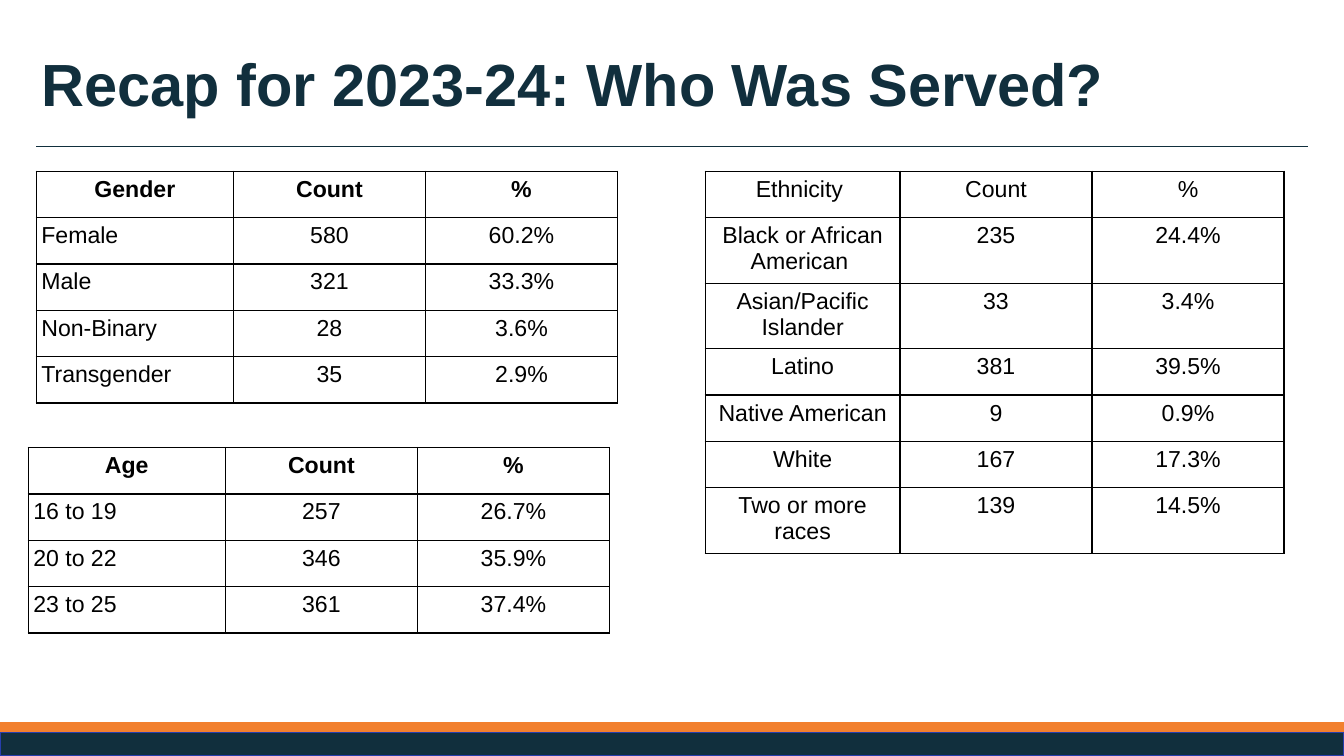
from lxml.etree import SubElement as Sub
from pptx import Presentation
from pptx.dml.color import RGBColor as RGB
from pptx.enum.shapes import MSO_CONNECTOR as Conn, MSO_SHAPE as Shape
from pptx.enum.text import MSO_ANCHOR as Anchor, PP_ALIGN as Align
from pptx.oxml.ns import qn
from pptx.util import Inches, Pt

COLORS = {"navy": "112F3D", "orange": "F2802E", "blue": "273EAC", "black": "000000"}


class Deck:
    """Holds the style and the slide; lengths are percent of slide width or height."""
    font = "Arial"
    pad = Inches(0.1)

    def __init__(self, wide, high):
        self.prs = Presentation()
        self.prs.slide_width, self.prs.slide_height = Inches(wide), Inches(high)
        self.slide = self.prs.slides.add_slide(self.prs.slide_layouts[6])
        self.shapes = self.slide.shapes

    def x(self, share):
        return round(self.prs.slide_width * share / 100)

    def y(self, share):
        return round(self.prs.slide_height * share / 100)

    def box(self, left, top, wide, high):
        return self.x(left), self.y(top), self.x(wide), self.y(high)

    def color(self, name):
        return RGB.from_string(COLORS[name])

    def run(self, para, text, size, color, bold=False):
        run = para.add_run()
        run.text = text
        run.font.name, run.font.size, run.font.bold = self.font, Pt(size), bold
        run.font.color.rgb = self.color(color)

    def band(self, top, high, fill, edge=None):
        bar = self.shapes.add_shape(Shape.RECTANGLE, *self.box(0, top, 100, high))
        bar.shadow.inherit = False
        bar.fill.solid()
        bar.fill.fore_color.rgb = self.color(fill)
        if edge:
            bar.line.color.rgb = self.color(edge)
            bar.line.width = Pt(2)
        else:
            bar.line.fill.background()

    def rule(self, left, right, top, color):
        line = self.shapes.add_connector(
            Conn.STRAIGHT, self.x(left), self.y(top), self.x(right), self.y(top))
        line.line.color.rgb = self.color(color)
        line.line.width = Pt(0.75)
        Sub(line._element.spPr, qn("a:effectLst"))

    def title(self, text, *area):
        frame = self.shapes.add_textbox(*self.box(*area)).text_frame
        frame.word_wrap = True
        frame.vertical_anchor = Anchor.MIDDLE
        para = frame.paragraphs[0]
        para.line_spacing = 0.9
        self.run(para, text, 85, "navy", True)

    def border(self, cell):
        props = cell._tc.get_or_add_tcPr()
        for side in ("lnL", "lnR", "lnT", "lnB"):
            line = Sub(props, qn(f"a:{side}"), w=str(Pt(2.25)))
            fill = Sub(line, qn("a:solidFill"))
            Sub(fill, qn("a:srgbClr"), val=COLORS["black"])

    def table(self, left, top, first, rows, bold=True, label=Align.LEFT):
        wides = [first, 14.29, 14.29]
        high = 6.13
        area = self.box(left, top, sum(wides), high * len(rows))
        table = self.shapes.add_table(len(rows), len(wides), *area).table
        table.first_row = bold
        table.horz_banding = False
        for col, wide in zip(table.columns, wides):
            col.width = self.x(wide)
        for r, row in enumerate(rows):
            table.rows[r].height = self.y(high)
            for c, text in enumerate(row):
                cell = table.cell(r, c)
                cell.margin_left = cell.margin_right = self.pad
                cell.margin_top = cell.margin_bottom = self.pad
                self.border(cell)
                cell.fill.background()
                para = cell.text_frame.paragraphs[0]
                para.alignment = label if r and not c else Align.CENTER
                self.run(para, text, 33, "black", bold and r == 0)


GENDER = [
    ("Gender", "Count", "%"),
    ("Female", "580", "60.2%"),
    ("Male", "321", "33.3%"),
    ("Non-Binary", "28", "3.6%"),
    ("Transgender", "35", "2.9%"),
]
ETHNIC = [
    ("Ethnicity ", "Count", "%"),
    ("Black or African American ", "235", "24.4%"),
    ("Asian/Pacific Islander", "33", "3.4%"),
    ("Latino", "381", "39.5%"),
    ("Native American", "9", "0.9%"),
    ("White", "167", "17.3%"),
    ("Two or more races", "139", "14.5%"),
]
AGE = [
    ("Age", "Count", "%"),
    ("16 to 19", "257", "26.7%"),
    ("20 to 22", "346", "35.9%"),
    ("23 to 25", "361", "37.4%"),
]


def main():
    deck = Deck(26.66, 15)

    # Footer bands and title rule
    deck.band(95.53, 1.33, "orange")
    deck.band(96.87, 3.13, "navy", "blue")
    deck.rule(2.7, 97.3, 19.4, "navy")

    # Title
    deck.title("Recap for 2023-24: Who Was Served?", 2.7, 4.67, 94.6, 13.67)

    # Tables
    deck.table(2.7, 22.67, 14.67, GENDER)
    deck.table(52.48, 22.67, 14.48, ETHNIC, bold=False, label=Align.CENTER)
    deck.table(2.1, 59.2, 14.67, AGE)

    deck.prs.save("out.pptx")


if __name__ == "__main__":
    main()
